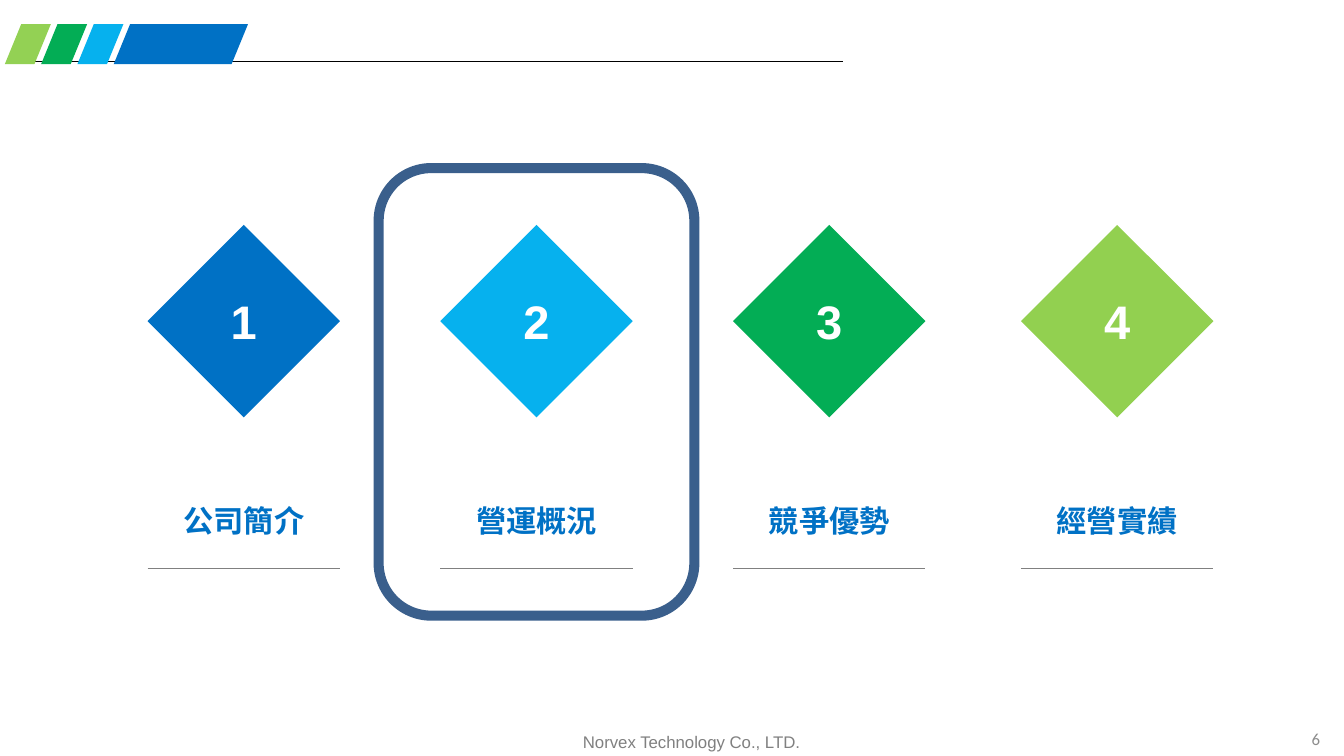
"""Build the agenda slide with the second of four sections framed."""
from lxml import etree
from pptx import Presentation
from pptx.dml.color import RGBColor
from pptx.enum.shapes import MSO_CONNECTOR, MSO_SHAPE
from pptx.enum.text import MSO_ANCHOR, MSO_AUTO_SIZE, PP_ALIGN
from pptx.oxml.ns import qn
from pptx.util import Inches, Pt

STRAIGHT = MSO_CONNECTOR.STRAIGHT
DIAMOND = MSO_SHAPE.DIAMOND
PARALLELOGRAM = MSO_SHAPE.PARALLELOGRAM
ROUNDED = MSO_SHAPE.ROUNDED_RECTANGLE
TOP, MIDDLE = MSO_ANCHOR.TOP, MSO_ANCHOR.MIDDLE
CENTER, RIGHT = PP_ALIGN.CENTER, PP_ALIGN.RIGHT
FIT_SHAPE = MSO_AUTO_SIZE.SHAPE_TO_FIT_TEXT

BLUE = RGBColor(0x00, 0x71, 0xC5)
SKY = RGBColor(0x06, 0xB1, 0xEE)
GREEN = RGBColor(0x03, 0xAD, 0x55)
LIME = RGBColor(0x93, 0xD1, 0x54)
LIME_DIAMOND = RGBColor(0x92, 0xD0, 0x50)
FRAME_BLUE = RGBColor(0x3A, 0x5F, 0x8C)
GRAY = RGBColor(0x80, 0x80, 0x80)
PAGE_GRAY = RGBColor(0x8C, 0x8C, 0x8C)
WHITE = RGBColor(0xFF, 0xFF, 0xFF)
BLACK = RGBColor(0x00, 0x00, 0x00)

NUMBER = {"name": "Arial", "size": Pt(28), "bold": True, "color": WHITE}
LABEL = {"name": "Noto Sans CJK SC", "size": Pt(18), "bold": True, "color": BLUE}
FOOTER = {"name": "Arial", "size": Pt(10), "color": GRAY}
PAGE = {"name": "Calibri", "size": Pt(10), "color": PAGE_GRAY}

SECTIONS = [
    (1.22, BLUE, "公司簡介"),
    (3.64, SKY, "營運概況"),
    (6.06, GREEN, "競爭優勢"),
    (8.44, LIME_DIAMOND, "經營實績"),
]
CURRENT = 1
DIAMOND_SIZE = 1.59
LABEL_W = 1.21
FRAME_W = 2.61
BANDS = [(LIME, 0.38), (GREEN, 0.38), (SKY, 0.38), (BLUE, 1.11)]


def write(tf, text, style, align=CENTER, anchor=MIDDLE, spacing=None):
    """Put one formatted line of text in a text frame."""
    tf.vertical_anchor = anchor
    p = tf.paragraphs[0]
    p.alignment = align
    p.line_spacing = spacing
    r = p.add_run()
    r.text = text
    for key, value in style.items():
        if key == "color":
            r.font.color.rgb = value
        else:
            setattr(r.font, key, value)
    etree.SubElement(r._r.get_or_add_rPr(), qn("a:ea"), typeface=style["name"])


def add_text(s, box, text, style, wrap=True, fit=False, **layout):
    """Add a text box."""
    tf = s.shapes.add_textbox(*map(Inches, box)).text_frame
    tf.word_wrap = wrap
    if fit:
        tf.auto_size = FIT_SHAPE
    write(tf, text, style, **layout)


def add_filled(s, kind, box, color):
    """Add a filled preset shape without outline."""
    sp = s.shapes.add_shape(kind, *map(Inches, box))
    sp.shadow.inherit = False
    sp.fill.solid()
    sp.fill.fore_color.rgb = color
    sp.line.fill.background()
    return sp


def add_rule(s, x, y, width, color):
    """Add a thin horizontal line."""
    line = s.shapes.add_connector(STRAIGHT, *map(Inches, (x, y, x + width, y)))
    line.line.color.rgb = color
    line.line.width = Pt(0.75)
    etree.SubElement(line._element.spPr, qn("a:effectLst"))


def add_header(s):
    """Add the header line and its slanted bands."""
    add_rule(s, 0.07, 0.51, 6.9, BLACK)
    for i, (color, width) in enumerate(BANDS):
        band = add_filled(s, PARALLELOGRAM, (0.04 + 0.3 * i, 0.2, width, 0.33), color)
        band.adjustments[0] = 0.41


def add_section(s, number, x, color, title):
    """Add a numbered diamond with its title and underline."""
    sp = add_filled(s, DIAMOND, (x, 1.86, DIAMOND_SIZE, DIAMOND_SIZE), color)
    write(sp.text_frame, str(number), NUMBER)
    label_x = x + (DIAMOND_SIZE - LABEL_W) / 2
    add_text(s, (label_x, 3.95, LABEL_W, 0.5), title, LABEL,
             wrap=False, fit=True, anchor=TOP, spacing=1.5)
    add_rule(s, x, 4.7, DIAMOND_SIZE, GRAY)


def add_frame(s, x):
    """Frame the section whose diamond starts at x."""
    box = (x + (DIAMOND_SIZE - FRAME_W) / 2, 1.39, FRAME_W, 3.7)
    sp = s.shapes.add_shape(ROUNDED, *map(Inches, box))
    sp.shadow.inherit = False
    sp.fill.background()
    sp.line.color.rgb = FRAME_BLUE
    sp.line.width = Pt(6)


def main():
    """Build and save the slide."""
    prs = Presentation()
    prs.slide_width, prs.slide_height = Inches(11.11), Inches(6.25)
    s = prs.slides.add_slide(prs.slide_layouts[6])
    add_header(s)
    for number, section in enumerate(SECTIONS, 1):
        add_section(s, number, *section)
    add_frame(s, SECTIONS[CURRENT][0])
    add_text(s, (4.09, 6, 3.25, 0.28), "Norvex Technology Co., LTD.", FOOTER,
             fit=True, anchor=TOP)
    add_text(s, (10.52, 5.96, 0.49, 0.29), "6", PAGE, align=RIGHT)
    prs.save("out.pptx")


if __name__ == "__main__":
    main()
